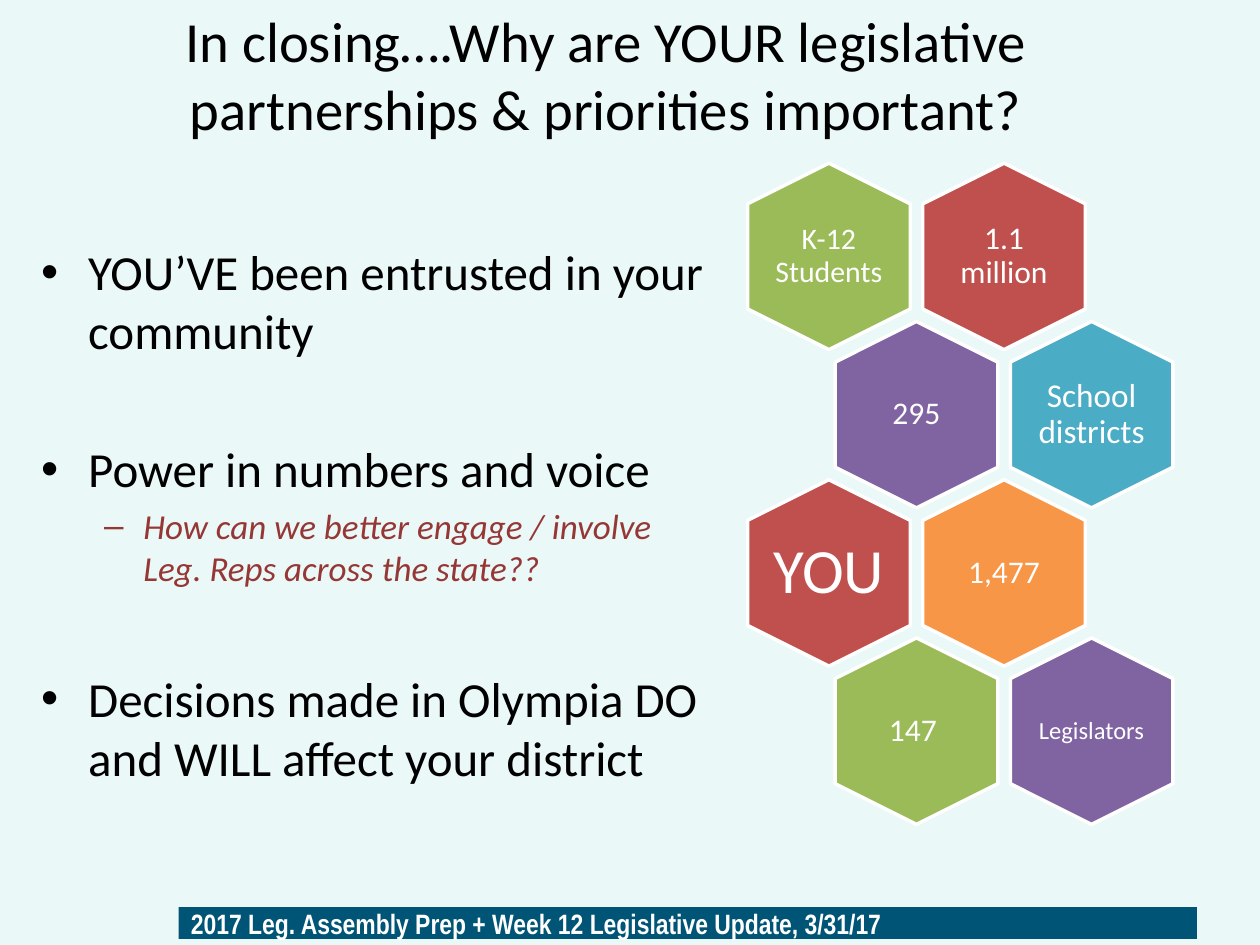
from lxml import etree
from pptx import Presentation, util as u
from pptx.dml.color import RGBColor
from pptx.enum import shapes, text
from pptx.oxml.ns import qn

HUES = {
    "back": "EAF8F8", "bar": "005476", "ink": "000000", "note": "953735",
    "white": "FFFFFF", "red": "C0504D", "green": "9BBB59",
    "plum": "8064A2", "teal": "4BACC6", "gold": "F79646",
}


def hue(name):
    return RGBColor.from_string(HUES[name])


class Page:
    """Holds the style and the current slide."""
    font = "Calibri"

    def __init__(self, deck):
        self.slide = deck.slides.add_slide(deck.slide_layouts[6])
        fill = self.slide.background.fill
        fill.solid()
        fill.fore_color.rgb = hue("back")

    def run(self, para, words, size, color="ink", font=None, bold=False, slant=False):
        run = para.add_run()
        run.text = words
        face = run.font
        face.name, face.size = font or self.font, u.Pt(size)
        face.bold, face.italic = bold, slant
        face.color.rgb = hue(color)

    def shape(self, kind, box, color, line=None):
        item = self.slide.shapes.add_shape(kind, *map(u.Cm, box))
        item.shadow.inherit = False
        item.fill.solid()
        item.fill.fore_color.rgb = hue(color)
        if line:
            item.line.color.rgb = hue(line)
            item.line.width = u.Pt(2)
        else:
            item.line.fill.background()
        return item

    def text(self, box, middle=True, inset=None):
        frame = self.slide.shapes.add_textbox(*map(u.Cm, box)).text_frame
        frame.word_wrap = True
        if middle:
            frame.vertical_anchor = text.MSO_ANCHOR.MIDDLE
        if inset is not None:
            frame.margin_left = frame.margin_right = u.Cm(inset)
            frame.margin_top = frame.margin_bottom = u.Cm(inset)
        return frame

    def bullet(self, para, mark, left, hang, before):
        para.space_before = u.Pt(before)
        props = para._p.get_or_add_pPr()
        props.set("marL", str(u.Cm(left)))
        props.set("indent", str(-u.Cm(hang)))
        etree.SubElement(props, qn("a:buFont")).set("typeface", "Arial")
        etree.SubElement(props, qn("a:buChar")).set("char", mark)

    def cell(self, x, y, color, words, size):
        wide, high = 3.76, 3.28
        hexa = self.shape(shapes.MSO_SHAPE.HEXAGON, (x, y, wide, high), color, "white")
        hexa.rotation = 90
        hexa.adjustments[0], hexa.adjustments[1] = 0.25, 1.1547
        tw, th = 2.27, 2.6
        frame = self.text((x + (wide - tw) / 2, y + (high - th) / 2, tw, th), inset=0)
        para = frame.paragraphs[0]
        para.alignment = text.PP_ALIGN.CENTER
        para.line_spacing = 0.9
        self.run(para, words, size, "white")


def main():
    deck = Presentation()
    deck.slide_width, deck.slide_height = u.Cm(25.4), u.Cm(19.05)
    page = Page(deck)

    # Footer bar
    bar = page.shape(shapes.MSO_SHAPE.RECTANGLE, (3.6, 18.29, 20.53, 0.64), "bar")
    bar.text_frame.vertical_anchor = text.MSO_ANCHOR.MIDDLE
    para = bar.text_frame.paragraphs[0]
    para.alignment = text.PP_ALIGN.LEFT
    page.run(para, "2017 Leg. Assembly Prep + Week 12 Legislative Update, 3/31/17",
             16, "white", "Arial Narrow", bold=True)

    # Title
    para = page.text((0.64, 0.64, 23.14, 1.7)).paragraphs[0]
    para.alignment = text.PP_ALIGN.CENTER
    page.run(para, "In closing….Why are YOUR legislative partnerships & "
                   "priorities important?", 32.4)

    # Bullets: level, space before, words
    points = [
        (0, 0, "YOU’VE been entrusted in your community"),
        (0, 45.4, "Power in numbers and voice"),
        (1, 4, "How can we better engage / involve Leg. Reps across the state??"),
        (0, 45.4, "Decisions made in Olympia DO and WILL affect your district"),
    ]
    frame = page.text((0.58, 4.75, 14, 12.47), middle=False)
    for i, (level, before, words) in enumerate(points):
        para = frame.add_paragraph() if i else frame.paragraphs[0]
        if level:
            para.level = level
            page.bullet(para, "–", 2.06, 0.79, before)
            page.run(para, words, 20, "note", slant=True)
        else:
            page.bullet(para, "•", 0.95, 0.95, before)
            page.run(para, words, 28)

    # Honeycomb: two cells a row, odd rows shifted by half a step
    cells = [
        [("green", "K-12 Students", 17), ("red", "1.1 million", 18)],
        [("plum", "295", 18), ("teal", "School districts", 19)],
        [("red", "YOU", 36), ("gold", "1,477", 18)],
        [("green", "147 ", 18), ("plum", "Legislators", 14)],
    ]
    step = 3.53
    for r, row in enumerate(cells):
        for c, cell in enumerate(row):
            page.cell(14.83 + (c + r % 2 / 2) * step, 3.53 + r * 3.19, *cell)

    deck.save("out.pptx")


if __name__ == "__main__":
    main()
